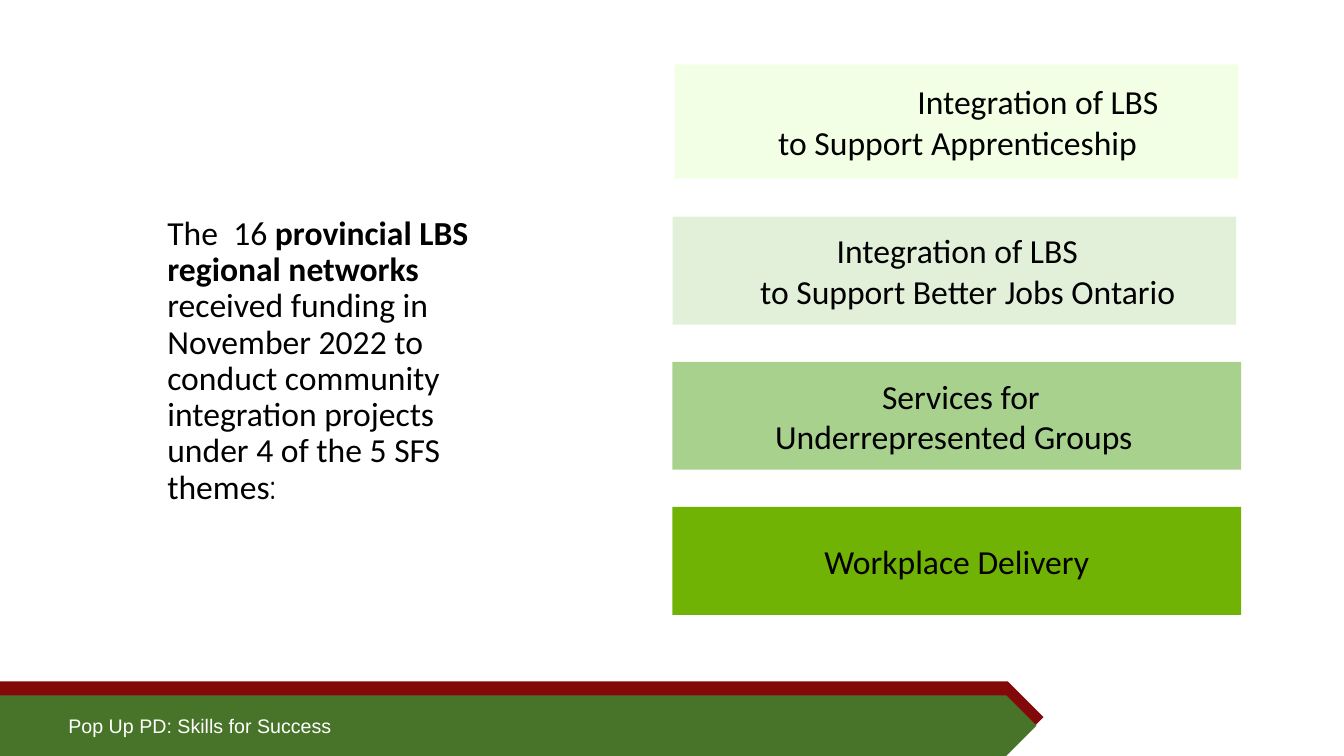
from dataclasses import dataclass

from pptx import Presentation
from pptx.dml.color import RGBColor
from pptx.enum.shapes import MSO_SHAPE
from pptx.enum.text import MSO_ANCHOR, MSO_AUTO_SIZE, PP_ALIGN
from pptx.util import Inches, Pt

BLACK = "000000"
WHITE = "FFFFFF"


@dataclass
class Line:
    text: str
    indent: float = 0


@dataclass
class Theme:
    left: float
    top: float
    width: float
    height: float
    fill: str
    lines: list[Line]
    align: PP_ALIGN = PP_ALIGN.LEFT


@dataclass
class Band:
    top: float
    width: float
    height: float
    fill: str


@dataclass
class Span:
    text: str
    bold: bool = False
    font: str = "Calibri"


THEMES = [
    Theme(6.69, 0.64, 5.59, 1.13, "F3FFE5",
          [Line("Integration of LBS", 2.31), Line("to Support Apprenticeship", 0.93)]),
    Theme(6.67, 2.15, 5.59, 1.07, "E2F0D9",
          [Line("Integration of LBS", 1.53), Line("to Support Better Jobs Ontario", 0.77)]),
    Theme(6.67, 3.59, 5.64, 1.07, "A9D18E",
          [Line("Services for", 1.98), Line("Underrepresented Groups", 0.92)]),
    Theme(6.67, 5.03, 5.64, 1.07, "71B305", [Line("Workplace Delivery")], PP_ALIGN.CENTER),
]
BANDS = [Band(6.76, 10.35, 0.71, "82080A"), Band(6.9, 10.28, 0.6, "487429")]
TITLE_SPANS = [
    Span("The  16 "),
    Span("provincial LBS regional networks ", bold=True),
    Span("received funding in November 2022 to conduct community "
         "integration projects under 4 of the 5 SFS themes"),
    Span(":", font="Quicksand"),
]


def color(value: str) -> RGBColor:
    return RGBColor.from_string(value)


def add_span(para, span: Span, size: float, ink: str) -> None:
    run = para.add_run()
    run.text = span.text
    run.font.name = span.font
    run.font.size = Pt(size)
    run.font.bold = span.bold
    run.font.color.rgb = color(ink)


def add_box(page, preset: MSO_SHAPE, left: float, top: float, width: float,
            height: float, fill: str):
    box = page.shapes.add_shape(preset, Inches(left), Inches(top), Inches(width), Inches(height))
    box.shadow.inherit = False
    box.fill.solid()
    box.fill.fore_color.rgb = color(fill)
    box.line.fill.background()
    return box


def add_theme(page, theme: Theme) -> None:
    box = add_box(page, MSO_SHAPE.RECTANGLE, theme.left, theme.top,
                  theme.width, theme.height, theme.fill)
    frame = box.text_frame
    frame.word_wrap = True
    frame.vertical_anchor = MSO_ANCHOR.MIDDLE
    for index, line in enumerate(theme.lines):
        para = frame.add_paragraph() if index else frame.paragraphs[0]
        para.alignment = theme.align
        para._p.get_or_add_pPr().set("marL", str(Inches(line.indent)))
        add_span(para, Span(line.text), 24, BLACK)


def add_footer(page) -> None:
    for band in BANDS:
        add_box(page, MSO_SHAPE.PENTAGON, 0, band.top, band.width, band.height, band.fill)
    box = page.shapes.add_textbox(Inches(0.58), Inches(7.03), Inches(6.97), Inches(0.34))
    box.text_frame.word_wrap = True
    add_span(box.text_frame.paragraphs[0],
             Span("Pop Up PD: Skills for Success", font="Arial"), 14, WHITE)


def format_title(page) -> None:
    title = page.shapes.title
    title.left, title.top = Inches(1.56), Inches(2.18)
    title.width, title.height = Inches(3.51), Inches(2.81)
    frame = title.text_frame
    frame.word_wrap = True
    frame.auto_size = MSO_AUTO_SIZE.NONE
    frame.vertical_anchor = MSO_ANCHOR.MIDDLE
    para = frame.paragraphs[0]
    para.alignment = PP_ALIGN.LEFT
    para.line_spacing = 0.9
    for span in TITLE_SPANS:
        add_span(para, span, 24, BLACK)


def main() -> None:
    deck = Presentation()
    deck.slide_width, deck.slide_height = Inches(13.33), Inches(7.5)
    page = deck.slides.add_slide(deck.slide_layouts[5])

    # Footer bands and course name
    add_footer(page)

    # Introduction on the left
    format_title(page)

    # Project themes on the right
    for theme in THEMES:
        add_theme(page, theme)

    deck.save("out.pptx")


if __name__ == "__main__":
    main()
